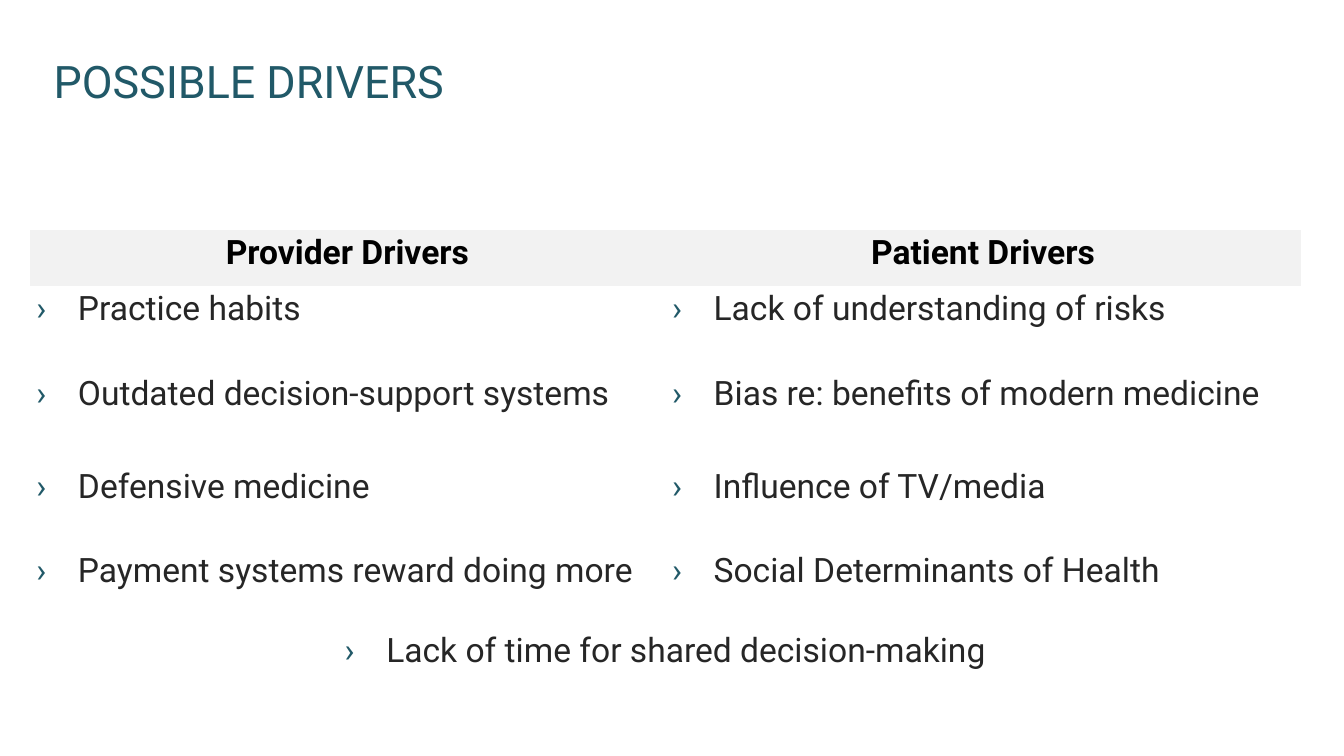
from lxml import etree
from pptx import Presentation
from pptx.dml.color import RGBColor
from pptx.enum.text import MSO_ANCHOR, PP_ALIGN
from pptx.oxml.ns import qn
from pptx.util import Inches, Pt

LEFT, CENTER = PP_ALIGN.LEFT, PP_ALIGN.CENTER
MIDDLE, TOP = MSO_ANCHOR.MIDDLE, MSO_ANCHOR.TOP
TEAL = RGBColor(0x21, 0x59, 0x68)
BLACK = RGBColor(0, 0, 0)
DARK = RGBColor(0x26, 0x26, 0x26)
PALE = RGBColor(0xF2, 0xF2, 0xF2)
FONT = "Roboto"
NO_STYLE = "{2D5ABB26-0587-4C30-8999-92F81FD0307C}"

TITLE = "POSSIBLE DRIVERS"
HEADERS = ("Provider Drivers", "Patient Drivers")
DRIVERS = [
    ("Practice habits", "Lack of understanding of risks"),
    ("Outdated decision-support systems", "Bias re: benefits of modern medicine"),
    ("Defensive medicine", "Influence of TV/media"),
    ("Payment systems reward doing more", "Social Determinants of Health"),
]
SHARED = "Lack of time for shared decision-making"
ROW_HEIGHTS = (0.84, 1.26, 1.38, 1.26, 1.19, 1.26)
COL_WIDTH = 9.46
INDENT = 0.62

TITLE_FORMAT = {"name": FONT, "size": Pt(48), "bold": False}
HEADER_FORMAT = {"name": FONT, "size": Pt(36), "bold": True}
BODY_FORMAT = {"name": FONT, "size": Pt(36), "bold": False}


def write(tf, text, fmt, color, align=LEFT):
    p = tf.paragraphs[0]
    p.alignment = align
    r = p.add_run()
    r.text = text
    for name, value in fmt.items():
        setattr(r.font, name, value)
    r.font.color.rgb = color
    return p


def add_bullet(p):
    ppr = p._p.get_or_add_pPr()
    ppr.set("marL", str(Inches(INDENT)))
    ppr.set("indent", str(-Inches(INDENT)))
    color = etree.SubElement(ppr, qn("a:buClr"))
    etree.SubElement(color, qn("a:srgbClr"), val=str(TEAL))
    etree.SubElement(ppr, qn("a:buFont"), typeface=FONT)
    etree.SubElement(ppr, qn("a:buChar"), char="›")


def fill_cell(cell, text, header=False, align=LEFT):
    cell.vertical_anchor = TOP
    if header:
        cell.fill.solid()
        cell.fill.fore_color.rgb = PALE
        write(cell.text_frame, text, HEADER_FORMAT, BLACK, CENTER)
    else:
        cell.fill.background()
        add_bullet(write(cell.text_frame, text, BODY_FORMAT, DARK, align))


def main():
    prs = Presentation()
    prs.slide_width, prs.slide_height = Inches(20), Inches(11.25)
    s = prs.slides.add_slide(prs.slide_layouts[6])

    box = s.shapes.add_textbox(Inches(0.7), Inches(0.62), Inches(15.55), Inches(1.17))
    tf = box.text_frame
    tf.word_wrap = True
    tf.vertical_anchor = MIDDLE
    write(tf, TITLE, TITLE_FORMAT, TEAL)

    rows, cols = len(ROW_HEIGHTS), len(HEADERS)
    table = s.shapes.add_table(
        rows, cols, Inches(0.44), Inches(3.42),
        Inches(cols * COL_WIDTH), Inches(sum(ROW_HEIGHTS)),
    ).table
    table.first_row = table.horz_banding = False
    table._tbl.tblPr.find(qn("a:tableStyleId")).text = NO_STYLE
    for col in table.columns:
        col.width = Inches(COL_WIDTH)
    for row, height in zip(table.rows, ROW_HEIGHTS):
        row.height = Inches(height)

    for i, texts in enumerate([HEADERS] + DRIVERS):
        for j, text in enumerate(texts):
            fill_cell(table.cell(i, j), text, header=i == 0)
    last = table.cell(rows - 1, 0)
    last.merge(table.cell(rows - 1, cols - 1))
    fill_cell(last, SHARED, align=CENTER)

    prs.save("out.pptx")


if __name__ == "__main__":
    main()
